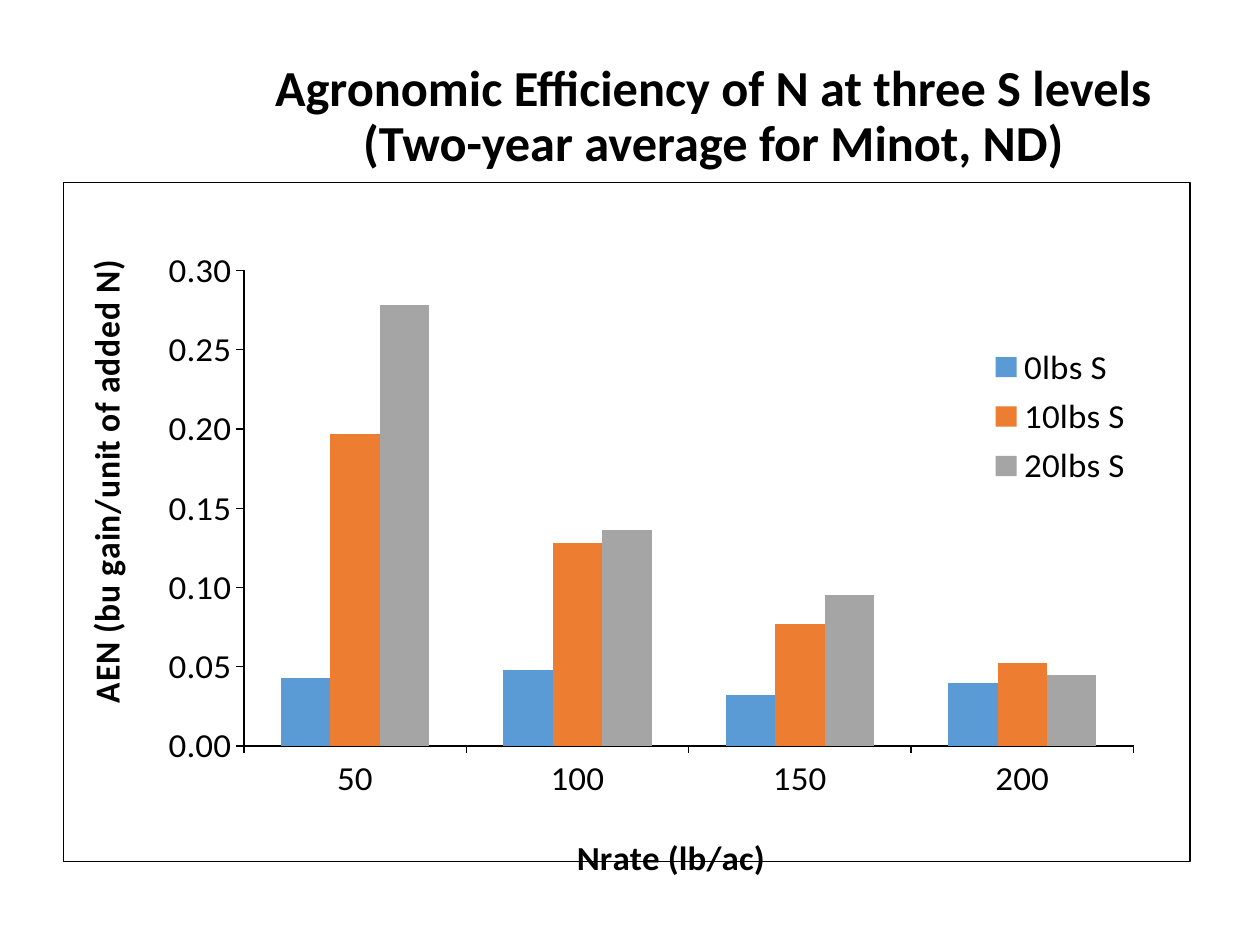
from dataclasses import dataclass

from lxml import etree
from pptx import Presentation
from pptx.chart.data import CategoryChartData
from pptx.dml.color import RGBColor
from pptx.enum.chart import XL_CHART_TYPE as ChartType
from pptx.enum.chart import XL_LEGEND_POSITION as LegendPosition
from pptx.enum.chart import XL_TICK_MARK as TickMark
from pptx.enum.text import MSO_ANCHOR, PP_ALIGN
from pptx.oxml import parse_xml
from pptx.oxml.ns import nsdecls, qn
from pptx.util import Cm, Pt


@dataclass(frozen=True)
class Theme:
    font: str = "Calibri"
    ink: RGBColor = RGBColor(0x00, 0x00, 0x00)
    series: tuple = ("5B9BD5", "ED7D31", "A5A5A5")
    heading: Pt = Pt(28.8)
    label: Pt = Pt(20)
    line: Pt = Pt(0.75)


theme = Theme()


def style_font(font, size, bold=False):
    font.name, font.size, font.bold = theme.font, size, bold
    font.color.rgb = theme.ink


def set_layout(part, index, inner=False, **fractions):
    """Place a chart part by fractions of the chart area."""
    for old in part.findall(qn("c:layout")):
        part.remove(old)
    layout = etree.Element(qn("c:layout"))
    manual = etree.SubElement(layout, qn("c:manualLayout"))
    if inner:
        etree.SubElement(manual, qn("c:layoutTarget"), val="inner")
    for mode in ("xMode", "yMode"):
        etree.SubElement(manual, qn(f"c:{mode}"), val="edge")
    for key, value in fractions.items():
        etree.SubElement(manual, qn(f"c:{key}"), val=str(value))
    part.insert(index, layout)


prs = Presentation()
prs.slide_width, prs.slide_height = Cm(25.4), Cm(19.05)
slide = prs.slides.add_slide(prs.slide_layouts[6])

# Heading
heading = slide.shapes.add_textbox(Cm(4.01), Cm(1.09), Cm(20.75), Cm(2.57)).text_frame
heading.word_wrap = True
heading.vertical_anchor = MSO_ANCHOR.MIDDLE
line = heading.paragraphs[0]
line.text = "Agronomic Efficiency of N at three S levels (Two-year average for Minot, ND)"
line.alignment = PP_ALIGN.CENTER
line.line_spacing = 0.9
style_font(line.font, theme.heading, bold=True)

# Efficiency by nitrogen rate and sulfur level
efficiency = CategoryChartData(number_format="0.00")
efficiency.categories = ["50", "100", "150", "200"]
efficiency.add_series("0lbs S", (0.043, 0.048, 0.032, 0.04))
efficiency.add_series("10lbs S", (0.197, 0.128, 0.077, 0.052))
efficiency.add_series("20lbs S", (0.278, 0.136, 0.095, 0.045))
chart = slide.shapes.add_chart(
    ChartType.COLUMN_CLUSTERED, Cm(1.27), Cm(3.66), Cm(22.73), Cm(14.27), efficiency
).chart
chart.has_title = False
style_font(chart.font, theme.label)

# Columns
plot = chart.plots[0]
plot.gap_width, plot.overlap = 150, 0
plot.vary_by_categories = False
for level, color in zip(plot.series, theme.series):
    level.format.fill.solid()
    level.format.fill.fore_color.rgb = RGBColor.from_string(color)
    level.invert_if_negative = False

# Axes
rate_axis, gain_axis = chart.category_axis, chart.value_axis
gain_axis.minimum_scale, gain_axis.maximum_scale = 0, 0.3
gain_axis.major_unit = 0.05
gain_axis.tick_labels.number_format = "0.00"
gain_axis.tick_labels.number_format_is_linked = False
for axis, caption, turn, x, y in (
    (rate_axis, "Nrate (lb/ac)", 0, 0.45, 0.95),
    (gain_axis, "AEN (bu gain/unit of added N)", -90, 0.01, 0.13),
):
    axis.has_major_gridlines = False
    axis.major_tick_mark, axis.minor_tick_mark = TickMark.OUTSIDE, TickMark.NONE
    axis.format.line.color.rgb = theme.ink
    axis.format.line.width = theme.line
    style_font(axis.tick_labels.font, theme.label)
    title_frame = axis.axis_title.text_frame
    title_frame.text = caption
    style_font(title_frame.paragraphs[0].font, theme.label, bold=True)
    title = axis.axis_title.element if hasattr(axis.axis_title, "element") else None
    if title is None:
        title = chart.element.xpath(".//c:valAx/c:title" if turn else ".//c:catAx/c:title")[0]
    body = title.find(".//" + qn("a:bodyPr"))
    body.set("rot", str(turn * 60000))
    body.set("vert", "horz")
    set_layout(title, 1, x=x, y=y)

# Legend
chart.has_legend = True
chart.legend.position = LegendPosition.BOTTOM
chart.legend.include_in_layout = False
style_font(chart.legend.font, theme.label)

# Plot and legend places, chart border
space = chart.element
set_layout(space.find(".//" + qn("c:plotArea")), 0, inner=True, x=0.16, y=0.13, w=0.79, h=0.7)
set_layout(space.find(".//" + qn("c:legend")), 1, x=0.81, y=0.23, w=0.15, h=0.23)
border = parse_xml(
    f'<c:spPr {nsdecls("c", "a")}><a:noFill/><a:ln w="{theme.line}">'
    f'<a:solidFill><a:srgbClr val="{theme.ink}"/></a:solidFill></a:ln></c:spPr>'
)
space.find(qn("c:chart")).addnext(border)

prs.save("out.pptx")
